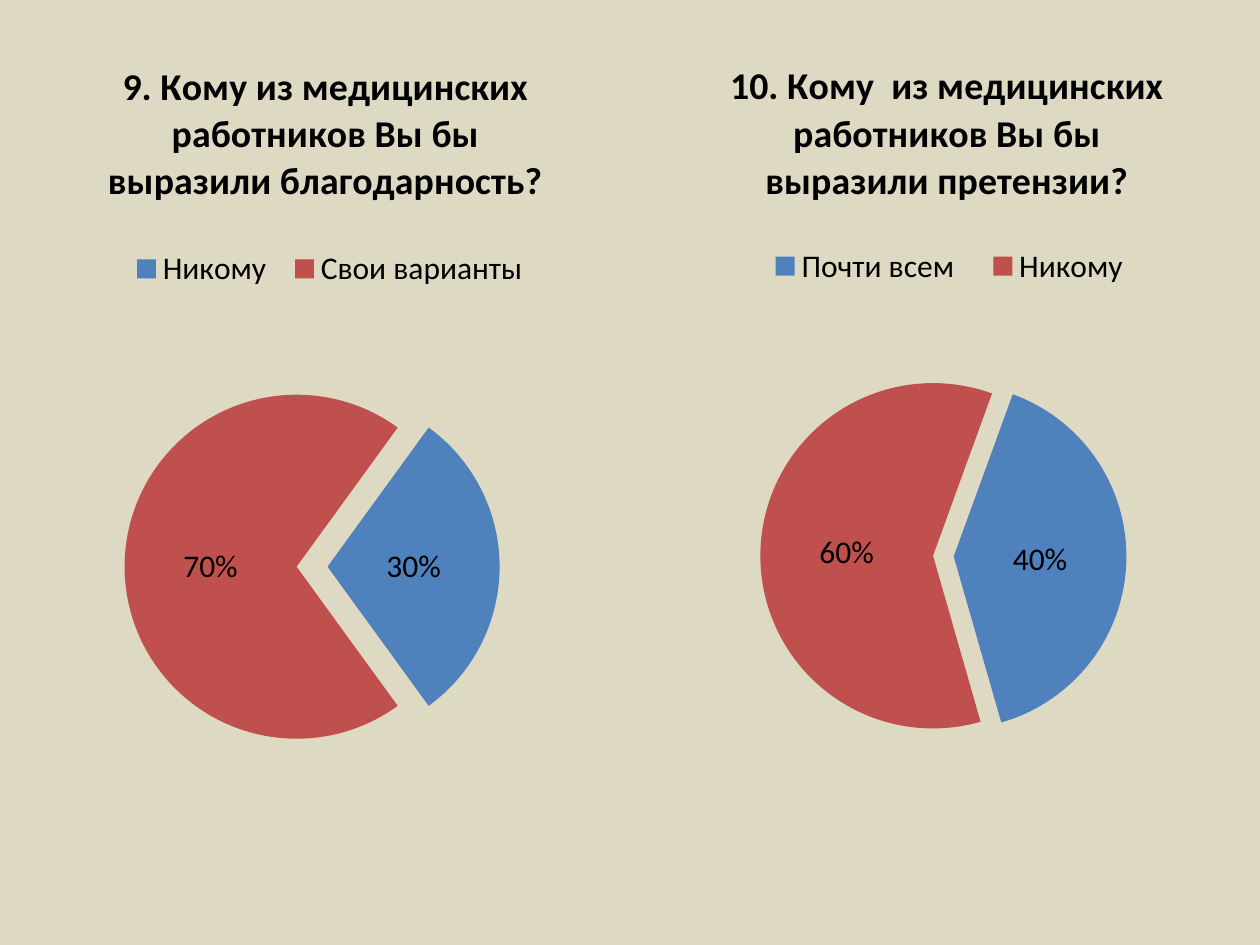
import pptx
import pptx.chart.data
import pptx.dml.color
import pptx.enum.chart
import pptx.oxml
import pptx.oxml.ns
import pptx.util

PX = 914400 // 126
COLORS = {"background": "DDD9C3", "text": "000000", "blue": "4F81BD", "red": "C0504D"}
CHARTS = [
    {"title": "9. Кому из медицинских работников Вы бы выразили благодарность?",
     "categories": ["Никому", "Свои варианты"], "values": [0.3, 0.7],
     "frame": (25, 16, 586, 903), "start": 36, "explosion": 9,
     "title_at": (0.13, 0.04), "legend_at": (0.16, 0.25, 0.72, 0.06),
     "plot_at": (0.17, 0.38, 0.64, 0.46)},
    {"title": "10. Кому  из медицинских работников Вы бы выразили претензии?",
     "categories": ["Почти всем", "Никому"], "values": [0.4, 0.6],
     "frame": (640, 16, 595, 893), "start": 20, "explosion": 6,
     "title_at": (0.14, 0.04), "legend_at": (0.18, 0.25, 0.68, 0.06),
     "plot_at": (0.2, 0.4, 0.62, 0.41)},
]


def chart_xml(tag, value=None):
    el = pptx.oxml.parse_xml(f"<c:{tag} {pptx.oxml.ns.nsdecls('c')}/>")
    if value is not None:
        el.set("val", str(value))
    return el


def place(parent, index, fractions, inner=False):
    """Give a chart part a manual layout in fractions of the chart frame."""
    for old in parent.findall(pptx.oxml.ns.qn("c:layout")):
        parent.remove(old)
    layout, manual = chart_xml("layout"), chart_xml("manualLayout")
    if inner:
        manual.append(chart_xml("layoutTarget", "inner"))
    for tag in ("xMode", "yMode"):
        manual.append(chart_xml(tag, "edge"))
    for tag, value in zip("xywh", fractions):
        manual.append(chart_xml(tag, value))
    layout.append(manual)
    parent.insert(index, layout)


prs = pptx.Presentation()
prs.slide_width, prs.slide_height = 1260 * PX, 945 * PX
s = prs.slides.add_slide(prs.slide_layouts[6])
s.background.fill.solid()
s.background.fill.fore_color.rgb = pptx.dml.color.RGBColor.from_string(COLORS["background"])

for item in CHARTS:
    data = pptx.chart.data.CategoryChartData(number_format="0%")
    data.categories = item["categories"]
    data.add_series(item["title"], item["values"])
    chart = s.shapes.add_chart(pptx.enum.chart.XL_CHART_TYPE.PIE,
                               *(n * PX for n in item["frame"]), data).chart
    chart.font.name = "Calibri"
    chart.font.size = pptx.util.Pt(18)
    chart.font.color.rgb = pptx.dml.color.RGBColor.from_string(COLORS["text"])

    chart.has_title = True
    p = chart.chart_title.text_frame.paragraphs[0]
    p.text = item["title"]
    p.font.size = pptx.util.Pt(21.6)
    p.font.bold = True
    place(chart.chart_title._element, 1, item["title_at"])

    chart.has_legend = True
    chart.legend.position = pptx.enum.chart.XL_LEGEND_POSITION.RIGHT
    chart.legend.include_in_layout = False
    place(chart.legend._element, 1, item["legend_at"])

    plot = chart.plots[0]
    plot.vary_by_categories = True
    series = plot.series[0]
    for i, name in enumerate(("blue", "red")):
        fill = series.points[i].format.fill
        fill.solid()
        fill.fore_color.rgb = pptx.dml.color.RGBColor.from_string(COLORS[name])
    first_point = series._element.find(pptx.oxml.ns.qn("c:dPt"))
    first_point.addprevious(chart_xml("explosion", item["explosion"]))

    labels = series.data_labels
    labels.show_value = True
    labels.show_percentage = False
    labels.number_format = "0%"
    labels.number_format_is_linked = False
    labels.position = pptx.enum.chart.XL_LABEL_POSITION.CENTER

    pie = plot._element
    for old in pie.findall(pptx.oxml.ns.qn("c:firstSliceAng")):
        pie.remove(old)
    pie.append(chart_xml("firstSliceAng", item["start"]))
    place(pie.getparent(), 0, item["plot_at"], inner=True)

prs.save("out.pptx")
